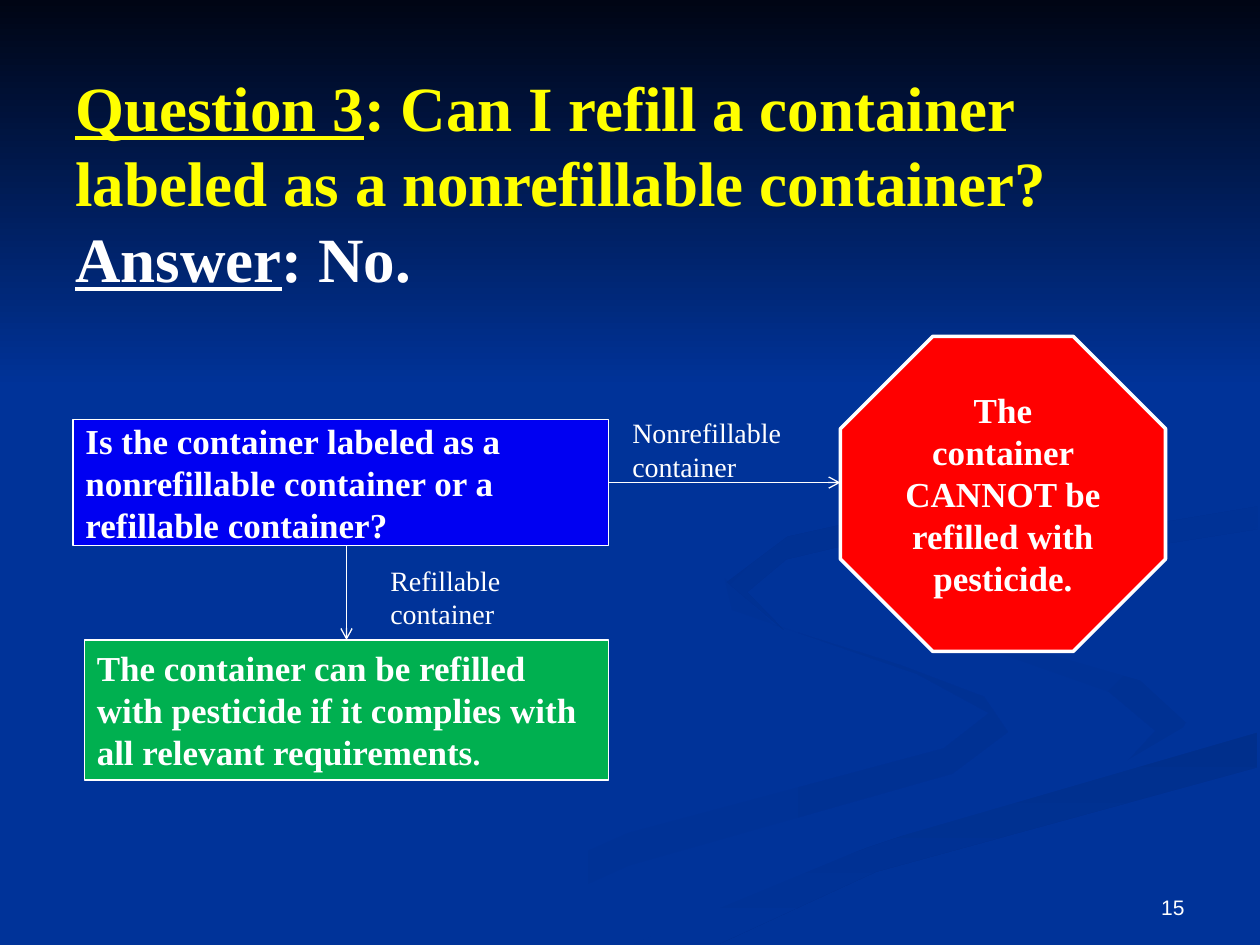
from dataclasses import dataclass
from typing import Optional

from lxml import etree
from pptx import Presentation
from pptx.dml.color import RGBColor
from pptx.enum.shapes import MSO_CONNECTOR, MSO_SHAPE
from pptx.enum.text import MSO_ANCHOR, PP_ALIGN
from pptx.oxml.ns import qn
from pptx.util import Pt

PX = 9144  # EMU per px, at 100 px to the inch
WIDTH, HEIGHT = 1000, 750
BLANK_LAYOUT = 6
SERIF, SANS = "Times New Roman", "Arial"
WHITE, YELLOW, BLUE = "FFFFFF", "FFFF00", "003399"
RECTANGLE, OCTAGON = MSO_SHAPE.RECTANGLE, MSO_SHAPE.OCTAGON
STRAIGHT = MSO_CONNECTOR.STRAIGHT
TOP, MIDDLE, BOTTOM = MSO_ANCHOR.TOP, MSO_ANCHOR.MIDDLE, MSO_ANCHOR.BOTTOM
LEFT, CENTER, RIGHT = PP_ALIGN.LEFT, PP_ALIGN.CENTER, PP_ALIGN.RIGHT
SIDE_TOP, SIDE_RIGHT = 0, 3


@dataclass(frozen=True)
class Span:
    text: str
    size: int
    color: str = WHITE
    bold: bool = False
    underline: bool = False
    font: str = SERIF
    break_after: bool = False


@dataclass(frozen=True)
class Box:
    """A text box, or a filled and outlined shape when a fill is given."""
    left: int
    top: int
    width: int
    height: int
    spans: tuple[Span, ...]
    anchor: MSO_ANCHOR = TOP
    align: PP_ALIGN = LEFT
    fill: Optional[str] = None
    shape: MSO_SHAPE = RECTANGLE
    outline: float = 0.75


@dataclass(frozen=True)
class Ribbon:
    """A curved background band, shaded from start to end at a clockwise angle."""
    start: str
    end: str
    angle: int
    points: tuple[tuple[int, int], ...]


RIBBONS = (
    Ribbon(BLUE, "003193", 0, (
        (781, 553), (715, 528), (614, 496), (575, 459), (581, 484), (728, 535), (785, 566),
        (749, 594), (499, 661), (300, 749), (361, 749), (499, 687), (756, 614), (800, 581))),
    Ribbon(BLUE, "003193", 45, (
        (943, 570), (905, 540), (758, 498), (724, 464), (755, 505), (880, 549), (917, 580),
        (894, 605), (932, 589))),
    Ribbon("002F8C", BLUE, 90, (
        (503, 749), (571, 749), (695, 692), (998, 609), (998, 581), (764, 647), (630, 693))),
    Ribbon(BLUE, BLUE, 0, (
        (725, 464), (759, 498), (905, 540), (943, 575), (892, 605), (704, 655), (477, 749),
        (503, 749), (696, 669), (999, 581), (999, 538), (832, 498), (781, 463), (850, 427),
        (999, 402), (999, 387), (770, 427))),
    Ribbon("003091", BLUE, 45, (
        (781, 460), (826, 496), (806, 468), (878, 439), (998, 420), (998, 402), (849, 427))),
    Ribbon("002F8E", BLUE, 45, (
        (683, 430), (825, 402), (894, 344), (854, 283), (762, 233), (846, 279), (889, 335),
        (842, 378), (625, 426), (577, 462), (622, 500), (593, 470), (624, 444))),
)


def rgb(color: str) -> RGBColor:
    return RGBColor.from_string(color)


def shade(shape, start: str, end: str, angle: int) -> None:
    """Fill an outline-free background shape with a two-colour gradient."""
    shape.shadow.inherit = False
    shape.line.fill.background()
    shape.fill.gradient()
    shape.fill.gradient_angle = 360 - angle
    for stop, color in zip(shape.fill.gradient_stops, (start, end)):
        stop.color.rgb = rgb(color)


def draw_ribbon(page, ribbon: Ribbon) -> None:
    first, *rest = ribbon.points
    builder = page.shapes.build_freeform(*first, scale=PX)
    builder.add_line_segments(rest, close=True)
    shade(builder.convert_to_shape(), ribbon.start, ribbon.end, ribbon.angle)


def draw_box(page, box: Box):
    bounds = [n * PX for n in (box.left, box.top, box.width, box.height)]
    if box.fill:
        shape = page.shapes.add_shape(box.shape, *bounds)
        shape.shadow.inherit = False
        shape.fill.solid()
        shape.fill.fore_color.rgb = rgb(box.fill)
        shape.line.color.rgb = rgb(WHITE)
        shape.line.width = Pt(box.outline)
    else:
        shape = page.shapes.add_textbox(*bounds)
    frame = shape.text_frame
    frame.word_wrap = True
    frame.vertical_anchor = box.anchor
    para = frame.paragraphs[0]
    para.alignment = box.align
    for span in box.spans:
        run = para.add_run()
        run.text = span.text
        run.font.name = span.font
        run.font.size = Pt(span.size)
        run.font.bold = span.bold
        run.font.underline = span.underline
        run.font.color.rgb = rgb(span.color)
        if span.break_after:
            para.add_line_break()
    return shape


def draw_arrow(page, start: tuple[int, int], end: tuple[int, int]):
    arrow = page.shapes.add_connector(STRAIGHT, *(n * PX for n in start + end))
    arrow.line.color.rgb = rgb(WHITE)
    arrow.line.width = Pt(0.75)
    etree.SubElement(arrow.line._get_or_add_ln(), qn("a:tailEnd"), type="arrow")
    etree.SubElement(arrow._element.spPr, qn("a:effectLst"))
    return arrow


def main() -> None:
    deck = Presentation()
    deck.slide_width, deck.slide_height = WIDTH * PX, HEIGHT * PX
    page = deck.slides.add_slide(deck.slide_layouts[BLANK_LAYOUT])
    page.background.fill.solid()
    page.background.fill.fore_color.rgb = rgb(BLUE)
    for ribbon in RIBBONS:
        draw_ribbon(page, ribbon)
    sky = page.shapes.add_shape(RECTANGLE, 0, 0, WIDTH * PX, 308 * PX)
    shade(sky, "000514", BLUE, 90)

    draw_box(page, Box(50, 30, 900, 228, (
        Span("Question 3", 36, YELLOW, True, True),
        Span(": Can I refill a container labeled as a nonrefillable container?", 36, YELLOW, True,
             break_after=True),
        Span("Answer", 36, WHITE, True, True),
        Span(": No.", 36, WHITE, True)), MIDDLE))
    draw_box(page, Box(717, 683, 233, 52, (Span("15", 12, font=SANS),), BOTTOM, RIGHT))

    question = draw_box(page, Box(58, 333, 425, 100, (
        Span("Is the container labeled as a nonrefillable container or a refillable container?",
             20, bold=True),), MIDDLE, fill="0000F2"))
    draw_box(page, Box(667, 267, 258, 250, (
        Span("The container CANNOT be refilled with pesticide.", 20, bold=True),),
        MIDDLE, CENTER, "FF0000", OCTAGON, 2))
    allowed = draw_box(page, Box(67, 508, 416, 111, (
        Span("The container can be refilled with pesticide if it complies with all relevant "
             "requirements", 20, bold=True),
        Span(".", 18, bold=True)), fill="00B050"))

    draw_arrow(page, (483, 383), (667, 383)).begin_connect(question, SIDE_RIGHT)
    draw_arrow(page, (275, 433), (275, 508)).end_connect(allowed, SIDE_TOP)
    draw_box(page, Box(492, 325, 167, 64, (Span("Nonrefillable container", 16),)))
    draw_box(page, Box(300, 442, 133, 64, (Span("Refillable container", 16),)))
    deck.save("out.pptx")


if __name__ == "__main__":
    main()
